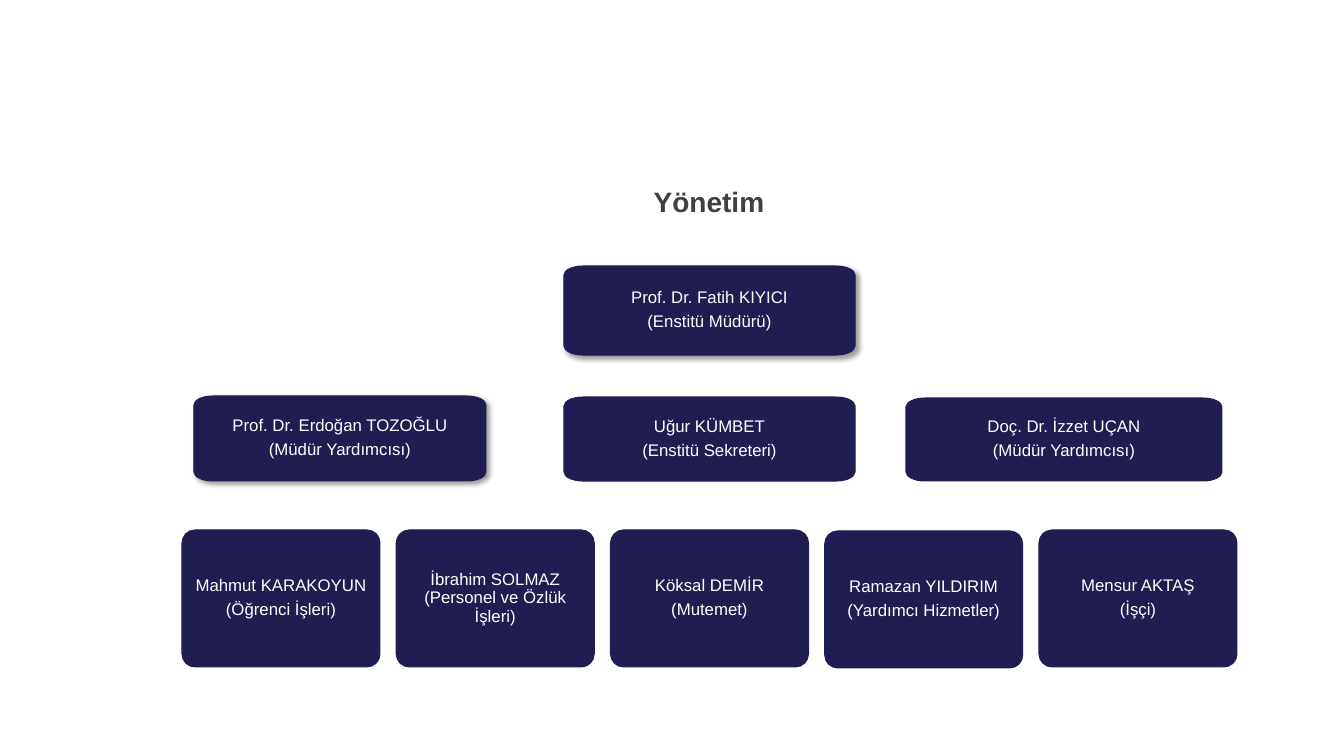
import pptx
import pptx.dml.color
import pptx.enum.text
import pptx.oxml
import pptx.oxml.ns
import pptx.util

PX = 914400 / 100.8
COLORS = {"navy": "1F1D52", "title": "404041", "white": "FFFFFF", "shadow": "000000"}
FONT = "Arial"
CENTER = pptx.enum.text.PP_ALIGN.CENTER
MIDDLE = pptx.enum.text.MSO_ANCHOR.MIDDLE
NAMESPACE = pptx.oxml.ns.nsdecls("a")
CURVE = 0.55

MANAGERS = [
    ((564, 266, 291, 89), ["Prof. Dr. Fatih KIYICI", "(Enstitü Müdürü)"], True),
    ((194, 396, 292, 85), ["Prof. Dr. Erdoğan TOZOĞLU", "(Müdür Yardımcısı)"], True),
    ((564, 397, 291, 84), ["Uğur KÜMBET", "(Enstitü Sekreteri)"], False),
    ((906, 398, 316, 83), ["Doç. Dr. İzzet UÇAN", "(Müdür Yardımcısı)"], False),
]
STAFF = [
    (0, ["Mahmut KARAKOYUN", "(Öğrenci İşleri)"]),
    (0, ["İbrahim SOLMAZ (Personel ve Özlük İşleri)"]),
    (0, ["Köksal DEMİR", "(Mutemet)"]),
    (1, ["Ramazan YILDIRIM", "(Yardımcı Hizmetler)"]),
    (0, ["Mensur AKTAŞ", "(İşçi)"]),
]


def px(length):
    return pptx.util.Emu(round(length * PX))


def rgb(name):
    return pptx.dml.color.RGBColor.from_string(COLORS[name])


def bezier(start, corner, end):
    controls = [tuple(round(a + (b - a) * CURVE) for a, b in zip(point, corner))
                for point in (start, end)]
    points = "".join(f'<a:pt x="{x}" y="{y}"/>' for x, y in [*controls, end])
    return pptx.oxml.parse_xml(f"<a:cubicBezTo {NAMESPACE}>{points}</a:cubicBezTo>")


def add_card(slide, box, radius_x, radius_y):
    left, top, width, height = map(px, box)
    inset_x, inset_y = px(radius_x), px(radius_y)
    right, bottom = left + width, top + height
    points = [
        (left, top + inset_y), (left + inset_x, top),
        (right - inset_x, top), (right, top + inset_y),
        (right, bottom - inset_y), (right - inset_x, bottom),
        (left + inset_x, bottom), (left, bottom - inset_y),
    ]
    builder = slide.shapes.build_freeform(*points[0])
    builder.add_line_segments(points[1:], close=True)
    shape = builder.convert_to_shape()

    outline = next(shape.element.iter(pptx.oxml.ns.qn("a:path")))
    segments = list(outline)
    local = [(x - left, y - top) for x, y in points]
    corners = [(0, 0), (width, 0), (width, height), (0, height)]
    for index, corner in enumerate(corners):
        start, end = local[2 * index:2 * index + 2]
        outline.replace(segments[2 * index + 1], bezier(start, corner, end))
    return shape


def add_soft_shadow(shape):
    effects = pptx.oxml.parse_xml(
        f'<a:effectLst {NAMESPACE}>'
        '<a:outerShdw blurRad="50800" dist="38100" dir="2700000" algn="tl" rotWithShape="0">'
        f'<a:srgbClr val="{COLORS["shadow"]}"><a:alpha val="40000"/></a:srgbClr>'
        '</a:outerShdw></a:effectLst>')
    properties = shape.element.spPr
    properties.replace(properties.find(pptx.oxml.ns.qn("a:effectLst")), effects)


def add_person(slide, box, lines, radius_x, radius_y, shadowed=False):
    shape = add_card(slide, box, radius_x, radius_y)
    shape.fill.solid()
    shape.fill.fore_color.rgb = rgb("navy")
    shape.line.color.rgb = rgb("navy")
    shape.line.width = pptx.util.Pt(0.75)
    shape.shadow.inherit = False
    if shadowed:
        add_soft_shadow(shape)

    frame = shape.text_frame
    frame.word_wrap = True
    frame.vertical_anchor = MIDDLE
    frame.margin_left = frame.margin_right = px(8)
    frame.margin_top = frame.margin_bottom = px(8)
    frame.text = "\n".join(lines)
    for paragraph in frame.paragraphs:
        paragraph.alignment = CENTER
        paragraph.line_spacing = 0.9
        paragraph.space_after = pptx.util.Pt(4.2)
        paragraph.font.name = FONT
        paragraph.font.size = pptx.util.Pt(12)
        paragraph.font.color.rgb = rgb("white")


def add_title(slide, box):
    title = slide.shapes.title
    title.left, title.top, title.width, title.height = map(px, box)
    title.text_frame.text = "Yönetim"
    title.text_frame.vertical_anchor = MIDDLE
    paragraph = title.text_frame.paragraphs[0]
    paragraph.alignment = CENTER
    paragraph.font.name = FONT
    paragraph.font.size = pptx.util.Pt(20)
    paragraph.font.bold = True
    paragraph.font.color.rgb = rgb("title")


def add_managers(slide):
    for box, lines, shadowed in MANAGERS:
        add_person(slide, box, lines, 19, 9, shadowed)


def add_staff_row(slide, box, card_width):
    left, top, width, height = box
    pitch = (width - card_width) / (len(STAFF) - 1)
    for index, (drop, lines) in enumerate(STAFF):
        card = (left + index * pitch, top + drop, card_width, height)
        add_person(slide, card, lines, 13, 13)


def main():
    presentation = pptx.Presentation()
    presentation.slide_width, presentation.slide_height = px(1344), px(756)
    slide = presentation.slides.add_slide(presentation.slide_layouts[0])
    subtitle = slide.placeholders[1].element
    subtitle.getparent().remove(subtitle)
    add_title(slide, (181, 169, 1056, 65))
    add_managers(slide)
    add_staff_row(slide, (182, 530, 1055, 137), 198)
    presentation.save("out.pptx")


if __name__ == "__main__":
    main()
